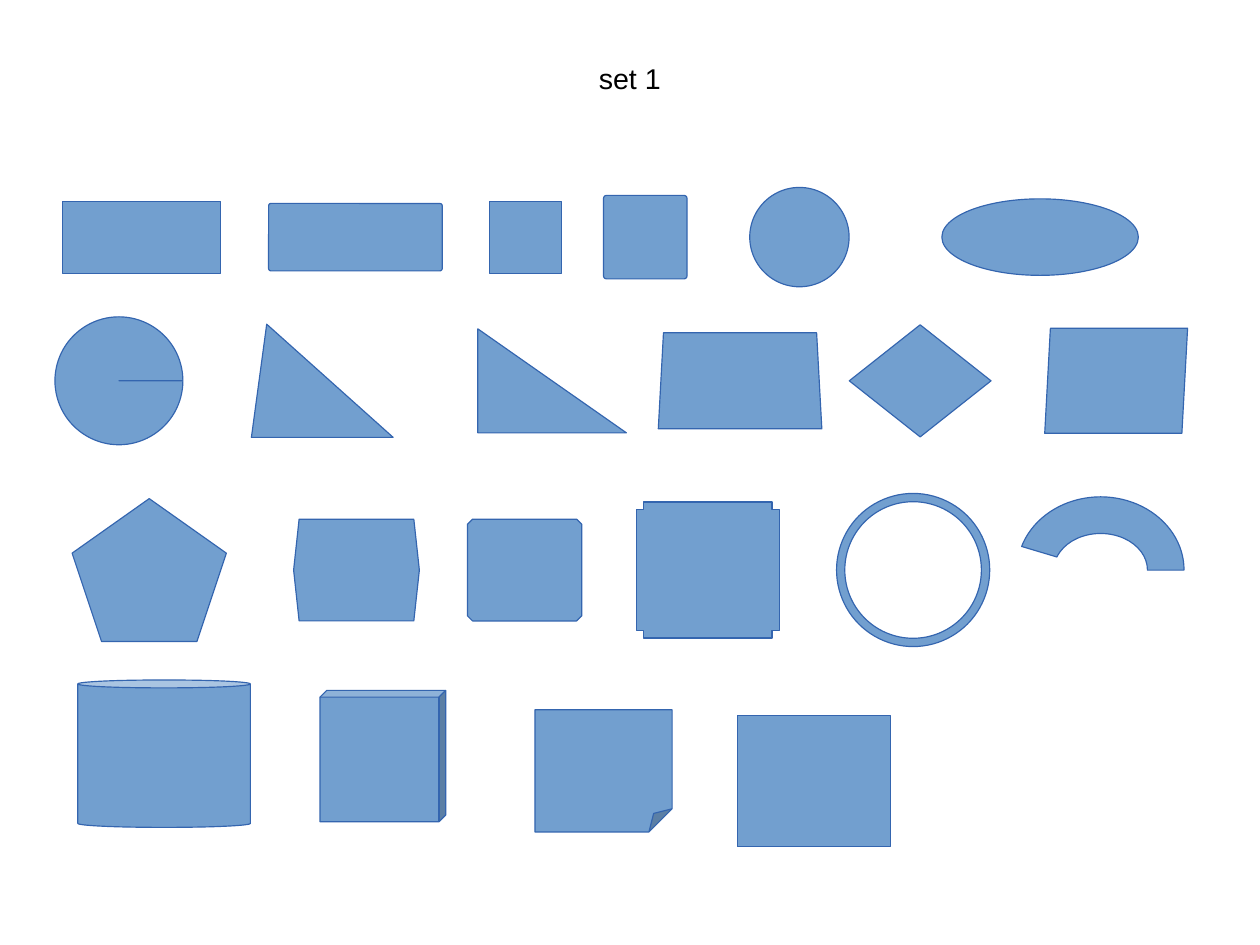
from lxml import etree
from pptx import Presentation
from pptx.dml.color import RGBColor
from pptx.enum.shapes import MSO_SHAPE as KIND
from pptx.enum.text import MSO_ANCHOR, PP_ALIGN
from pptx.oxml.ns import qn
from pptx.util import Pt

CENTER = PP_ALIGN.CENTER
MIDDLE = MSO_ANCHOR.MIDDLE
FILL, LINE, INK = "729FCF", "3465AF", "000000"

# Each row: middle height, then shapes as kind, left, width, height and
# adjustments in percent.
ROWS = [
    (149.4, [
        (KIND.RECTANGLE, 39.6, 99.4, 45.4),
        (KIND.ROUNDED_RECTANGLE, 169.2, 109.4, 42.5, 3.6),
        (KIND.RECTANGLE, 308.2, 45.4, 45.4),
        (KIND.ROUNDED_RECTANGLE, 380.2, 52.6, 52.6, 3.6),
        (KIND.OVAL, 472.3, 62.6, 62.6),
        (KIND.OVAL, 593.3, 123.8, 48.2),
    ]),
    (239.9, [
        (KIND.PIE, 34.6, 80.6, 80.6, -0.1, 0),
        (KIND.ISOSCELES_TRIANGLE, 158.4, 89.3, 71.3, 10.8),
        (KIND.RIGHT_TRIANGLE, 301, 93.6, 65.5),
        (KIND.TRAPEZOID, 414.7, 103, 60.5, 5.4),
        (KIND.DIAMOND, 535, 89.3, 70.6),
        (KIND.PARALLELOGRAM, 658.1, 90, 66.2, 5.4),
    ]),
    (359.1, [
        (KIND.REGULAR_PENTAGON, 45.4, 97.2, 90),
        (KIND.HEXAGON, 185, 79.2, 64.1, 5.4),
        (KIND.OCTAGON, 294.5, 72, 64.1, 5),
        (KIND.CROSS, 401, 90, 85.7, 5.4),
        (KIND.DONUT, 527, 96.5, 96.5, 5.4),
        (KIND.BLOCK_ARC, 640.8, 105.1, 92.2, 11796.5, 5.4, 25),
    ]),
    (474.8, [(KIND.CAN, 49, 108.7, 92.9, 5.4)]),
    (476.3, [(KIND.CUBE, 201.6, 79.2, 82.8, 5.4)]),
    (485.6, [(KIND.FOLDED_CORNER, 337, 86.4, 77, 18.9)]),
    (492.1, [(KIND.RECTANGLE, 464.4, 96.5, 82.8)]),
]


def color(code):
    return RGBColor.from_string(code)


def set_guides(shape, adjust):
    """Write the adjustments as guides: adj alone, or adj1, adj2 and so on."""
    guides = shape.element.find(".//" + qn("a:avLst"))
    for old in list(guides):
        guides.remove(old)
    for i, percent in enumerate(adjust, 1):
        name = "adj" if len(adjust) == 1 else f"adj{i}"
        value = round(percent * 1000)
        etree.SubElement(guides, qn("a:gd"), name=name, fmla=f"val {value}")


def add_figure(slide, mid, kind, left, width, height, *adjust):
    """Draw a preset shape centred vertically on mid."""
    shape = slide.shapes.add_shape(
        kind, Pt(left), Pt(mid - height / 2), Pt(width), Pt(height))
    if adjust:
        set_guides(shape, adjust)
    shape.shadow.inherit = False
    shape.fill.solid()
    shape.fill.fore_color.rgb = color(FILL)
    shape.line.color.rgb = color(LINE)
    shape.line.width = Pt(0.75)


def add_title(slide, text):
    box = slide.shapes.add_textbox(Pt(39.6), Pt(23.8), Pt(714.2), Pt(51.1))
    frame = box.text_frame
    frame.word_wrap = True
    frame.vertical_anchor = MIDDLE
    frame.margin_left = frame.margin_right = Pt(0)
    frame.margin_top = frame.margin_bottom = Pt(0)
    frame.text = text
    line = frame.paragraphs[0]
    line.alignment = CENTER
    font = line.runs[0].font
    font.name = "Arial"
    font.size = Pt(18)
    font.color.rgb = color(INK)


def main():
    deck = Presentation()
    deck.slide_width, deck.slide_height = Pt(793.7), Pt(595.3)
    slide = deck.slides.add_slide(deck.slide_layouts[6])
    for mid, figures in ROWS:
        for figure in figures:
            add_figure(slide, mid, *figure)
    add_title(slide, "set 1")
    deck.save("out.pptx")


if __name__ == "__main__":
    main()
